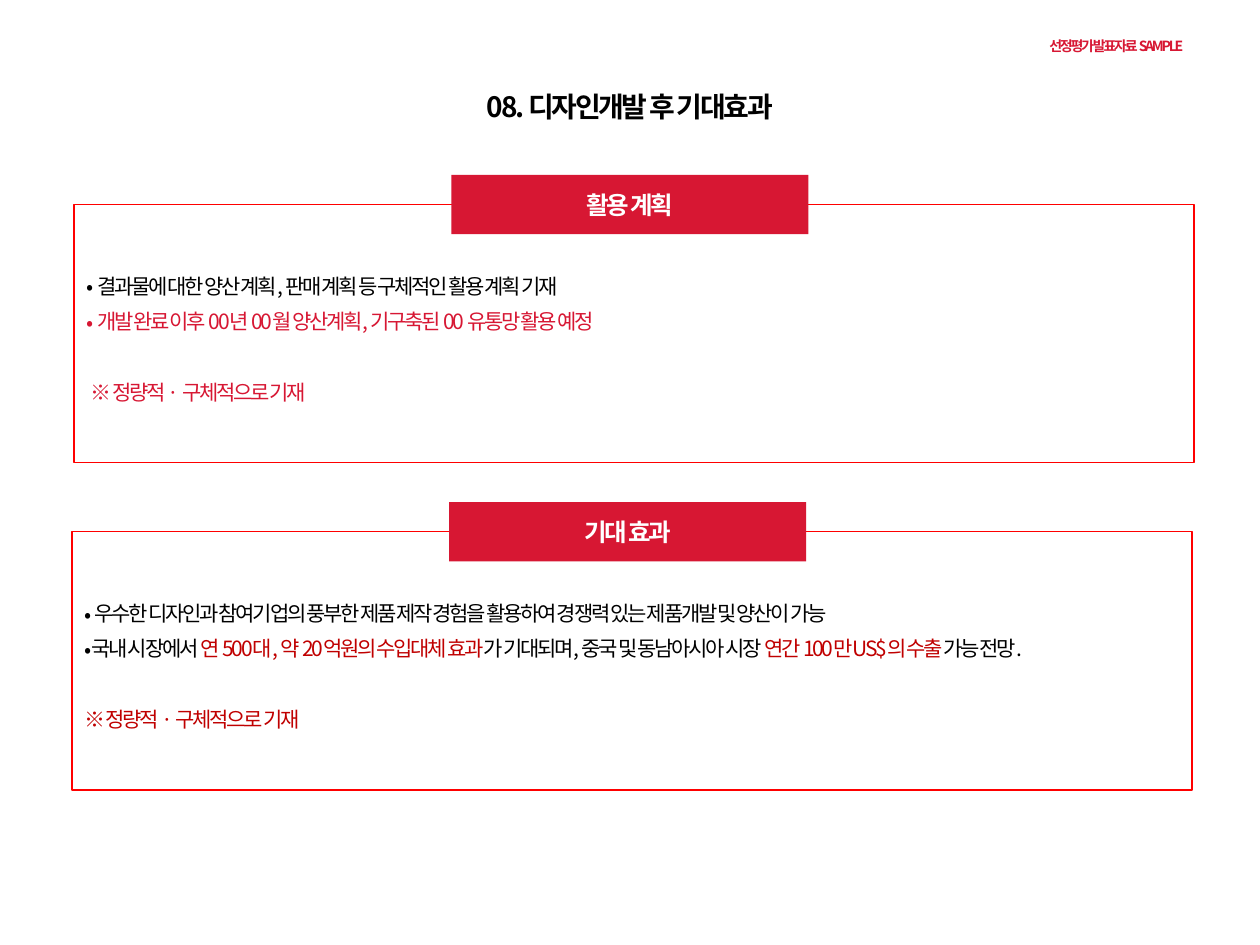
from lxml import etree
from pptx import Presentation
from pptx.dml.color import RGBColor
from pptx.enum.shapes import MSO_SHAPE
from pptx.enum.text import MSO_ANCHOR, MSO_AUTO_SIZE, PP_ALIGN
from pptx.oxml.ns import qn
from pptx.util import Pt

RECTANGLE = MSO_SHAPE.RECTANGLE
TOP, MIDDLE = MSO_ANCHOR.TOP, MSO_ANCHOR.MIDDLE
LEFT, CENTER = PP_ALIGN.LEFT, PP_ALIGN.CENTER
NO_FIT = MSO_AUTO_SIZE.NONE

BLACK, WHITE = "000000", "FFFFFF"
CRIMSON, DARK_RED, BORDER_RED = "D71733", "C00000", "FF0000"


def color(hex_code):
    return RGBColor.from_string(hex_code)


class SlideBuilder:
    font_name = "Noto Sans CJK KR"
    letter_spacing = -130  # hundredths of a point
    line_pitch = 20.2

    def __init__(self, slide):
        self.slide = slide

    def run(self, paragraph, text, size, hex_code, bold=False):
        run = paragraph.add_run()
        run.text = text
        run.font.size = Pt(size)
        run.font.bold = bold
        run.font.color.rgb = color(hex_code)
        run.font.name = self.font_name
        properties = run.font._element
        properties.set("spc", str(self.letter_spacing))
        etree.SubElement(properties, qn("a:ea"), typeface=self.font_name)

    def frame(self, shape, anchor, insets=(7.2, 3.6), wrap=True):
        """Set up the text frame; insets are horizontal and vertical."""
        frame = shape.text_frame
        frame.auto_size = NO_FIT
        frame.word_wrap = wrap
        frame.vertical_anchor = anchor
        frame.margin_left = frame.margin_right = Pt(insets[0])
        frame.margin_top = frame.margin_bottom = Pt(insets[1])
        return frame

    def centered_line(self, frame, text, size, hex_code):
        paragraph = frame.paragraphs[0]
        paragraph.alignment = CENTER
        self.run(paragraph, text, size, hex_code, bold=True)

    def title(self, text, left, top, width, height):
        title = self.slide.shapes.title
        title.left, title.top = Pt(left), Pt(top)
        title.width, title.height = Pt(width), Pt(height)
        frame = self.frame(title, MIDDLE, (8.6, 4.3), wrap=False)
        self.centered_line(frame, text, 16, BLACK)

    def label(self, text, left, top, width, height):
        box = self.slide.shapes.add_textbox(Pt(left), Pt(top), Pt(width), Pt(height))
        self.centered_line(self.frame(box, TOP), text, 8, CRIMSON)

    def rectangle(self, left, top, width, height, fill, border=None):
        shape = self.slide.shapes.add_shape(
            RECTANGLE, Pt(left), Pt(top), Pt(width), Pt(height))
        shape.shadow.inherit = False
        shape.fill.solid()
        shape.fill.fore_color.rgb = color(fill)
        if border:
            shape.line.color.rgb = color(border)
            shape.line.width = Pt(1)
        else:
            shape.line.fill.background()
        return shape

    def body_line(self, paragraph, runs, indent, bulleted):
        paragraph.alignment = LEFT
        paragraph.line_spacing = Pt(self.line_pitch)
        properties = paragraph._p.get_or_add_pPr()
        properties.set("marL", str(Pt(indent)))
        properties.set("indent", str(Pt(-indent if bulleted else 0)))
        if bulleted:
            etree.SubElement(properties, qn("a:buFont"), typeface=self.font_name)
            etree.SubElement(properties, qn("a:buChar"), char="•")
        else:
            paragraph.space_before = Pt(self.line_pitch)
        for text, hex_code in runs:
            self.run(paragraph, text, 12, hex_code)

    def section(self, heading, left, top, lines):
        """Draw a bordered panel with a heading tab across its top edge."""
        panel = self.rectangle(left, top, 640, 147.6, WHITE, BORDER_RED)
        frame = self.frame(panel, TOP, (7.2, 33.5))
        for number, line in enumerate(lines):
            paragraph = frame.add_paragraph() if number else frame.paragraphs[0]
            self.body_line(paragraph, *line)
        tab = self.rectangle(left + 215.5, top - 16.8, 204, 33.8, CRIMSON)
        self.centered_line(self.frame(tab, MIDDLE), heading, 14, WHITE)


def main():
    presentation = Presentation()
    presentation.slide_width, presentation.slide_height = Pt(720), Pt(540)
    title_only = presentation.slide_layouts[5]
    builder = SlideBuilder(presentation.slides.add_slide(title_only))

    builder.title("08. 디자인개발 후 기대효과", 95, 44, 530, 33)
    builder.label("선정평가 발표자료 SAMPLE", 586.8, 18, 102.2, 17.3)

    # Each line: runs, indent in points, bulleted
    plan_lines = [
        ([("결과물에 대한 양산 계획, 판매 계획 등 구체적인 활용 계획 기재", BLACK)], 6, True),
        ([("개발 완료 이후 00년 00월 양산계획, 기구축된 00 유통망 활용 예정", CRIMSON)], 6, True),
        ([("※ 정량적 · 구체적으로 기재", CRIMSON)], 2.5, False),
    ]
    effect_lines = [
        ([("우수한 디자인과 참여기업의 풍부한 제품 제작 경험을 활용하여 "
           "경쟁력 있는 제품개발 및 양산이 가능", BLACK)], 6, True),
        ([("국내 시장에서 ", BLACK),
          ("연 500대, 약 20억원의 수입대체 효과", DARK_RED),
          ("가 기대되며, 중국 및 동남아시아 시장 ", BLACK),
          ("연간 100만US$의 수출", DARK_RED),
          ("가능 전망.", BLACK)], 0, True),
        ([("※ 정량적 · 구체적으로 기재", DARK_RED)], 0, False),
    ]
    builder.section("활용 계획", 42.4, 116.8, plan_lines)
    builder.section("기대 효과", 41.2, 303.8, effect_lines)

    presentation.save("out.pptx")


if __name__ == "__main__":
    main()
